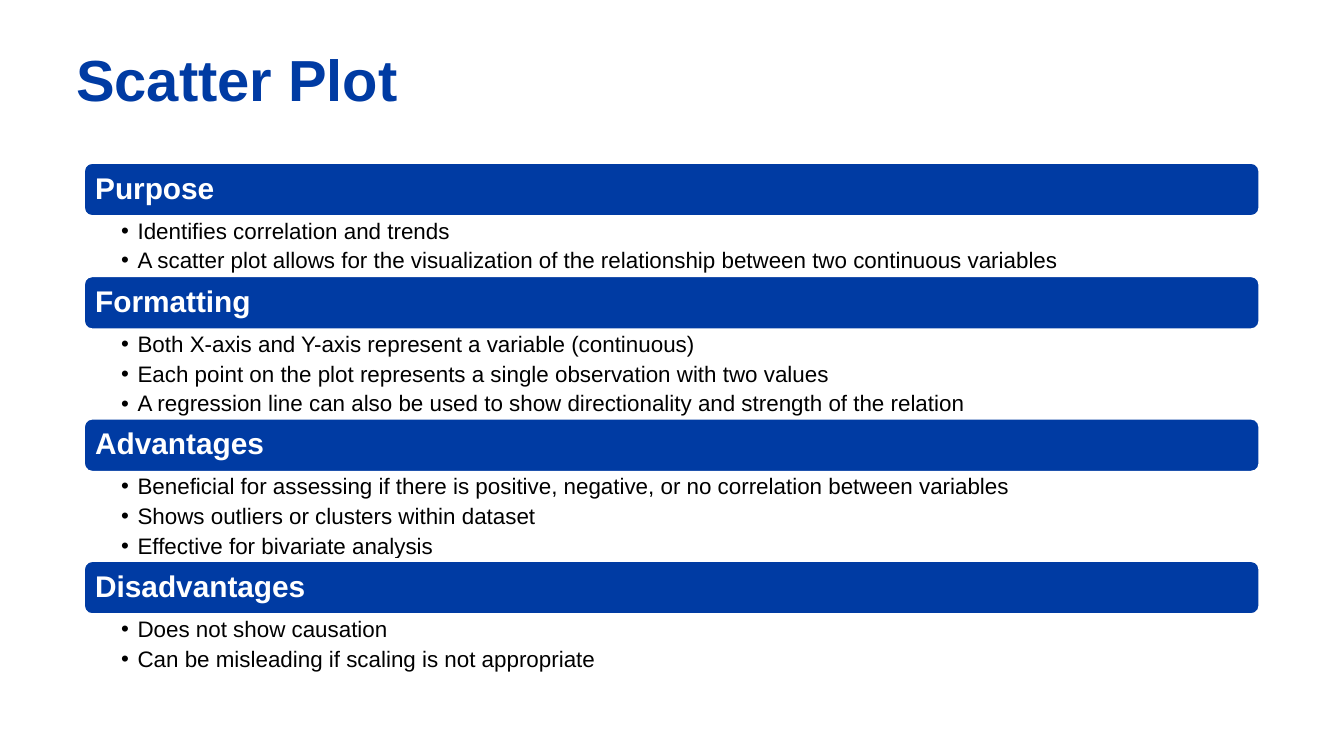
from dataclasses import dataclass

from lxml.etree import SubElement
from pptx import Presentation
from pptx.dml.color import RGBColor
from pptx.enum.shapes import MSO_SHAPE
from pptx.enum.text import MSO_ANCHOR, MSO_AUTO_SIZE, PP_ALIGN
from pptx.oxml.ns import qn
from pptx.util import Cm, Pt


@dataclass(frozen=True)
class Theme:
    font: str = "Arial"
    blue: RGBColor = RGBColor(0x00, 0x3B, 0xA3)
    white: RGBColor = RGBColor(0xFF, 0xFF, 0xFF)
    black: RGBColor = RGBColor(0x00, 0x00, 0x00)
    title_size: Pt = Pt(31)
    heading_size: Pt = Pt(16)
    body_size: Pt = Pt(12)


THEME = Theme()

# Layout of the stacked sections
LEFT, TOP, WIDTH = Cm(1.57), Cm(3.06), Cm(22.25)
BANNER_HEIGHT = Cm(1.04)
ROW_HEIGHT = Cm(0.55)
BULLET_INDENT = Cm(0.31)

SECTIONS = [
    ("Purpose", [
        "Identifies correlation and trends",
        "A scatter plot allows for the visualization of the relationship "
        "between two continuous variables",
    ]),
    ("Formatting", [
        "Both X-axis and Y-axis represent a variable (continuous)",
        "Each point on the plot represents a single observation with two values",
        "A regression line can also be used to show directionality and "
        "strength of the relation",
    ]),
    ("Advantages", [
        "Beneficial for assessing if there is positive, negative, or no "
        "correlation between variables",
        "Shows outliers or clusters within dataset",
        "Effective for bivariate analysis",
    ]),
    ("Disadvantages", [
        "Does not show causation",
        "Can be misleading if scaling is not appropriate",
    ]),
]


def place(sp, left, top, width, height):
    sp.left, sp.top, sp.width, sp.height = left, top, width, height


def set_frame(tf, anchor, left, top, right, bottom):
    tf.word_wrap = True
    tf.auto_size = MSO_AUTO_SIZE.NONE
    tf.vertical_anchor = anchor
    tf.margin_left, tf.margin_top = left, top
    tf.margin_right, tf.margin_bottom = right, bottom


def format_text(p, size, color, bold=False):
    p.alignment = PP_ALIGN.LEFT
    for r in p.runs:
        r.font.name = THEME.font
        r.font.size = size
        r.font.bold = bold
        r.font.color.rgb = color


def add_bullet(p):
    pPr = p._p.get_or_add_pPr()
    pPr.set("marL", str(BULLET_INDENT))
    pPr.set("indent", str(-BULLET_INDENT))
    color = SubElement(pPr, qn("a:buClr"))
    SubElement(color, qn("a:srgbClr"), val=str(THEME.black))
    SubElement(pPr, qn("a:buFont"), typeface=THEME.font)
    SubElement(pPr, qn("a:buChar"), char="•")


def fill_title(sp, text):
    place(sp, Cm(1.19), Cm(0.58), Cm(21.9), Cm(2.77))
    tf = sp.text_frame
    tf.text = text
    set_frame(tf, MSO_ANCHOR.TOP, *[Cm(0.25)] * 4)
    format_text(tf.paragraphs[0], THEME.title_size, THEME.blue, bold=True)


def add_banner(s, text, top):
    sp = s.shapes.add_shape(MSO_SHAPE.ROUNDED_RECTANGLE,
                            LEFT, top, WIDTH, BANNER_HEIGHT)
    sp.shadow.inherit = False
    sp.fill.solid()
    sp.fill.fore_color.rgb = THEME.blue
    sp.line.color.rgb = THEME.white
    sp.line.width = Pt(2)
    tf = sp.text_frame
    tf.text = text
    set_frame(tf, MSO_ANCHOR.MIDDLE, Cm(0.18), 0, Cm(0.18), 0)
    p = tf.paragraphs[0]
    p.line_spacing = 0.9
    format_text(p, THEME.heading_size, THEME.white, bold=True)


def fill_list(sp, items, top, height):
    place(sp, LEFT, top, WIDTH, height)
    tf = sp.text_frame
    tf.text = "\n".join(items)
    set_frame(tf, MSO_ANCHOR.TOP, Cm(0.72), Cm(0.05), Cm(0.3), Cm(0.05))
    for p in tf.paragraphs:
        add_bullet(p)
        p.level = 1
        p.line_spacing = 0.9
        p.space_before = Pt(0)
        p.space_after = Pt(3)
        format_text(p, THEME.body_size, THEME.black)


def main():
    prs = Presentation()
    prs.slide_width, prs.slide_height = Cm(25.4), Cm(14.28)

    # The Comparison layout has a title and four body placeholders
    s = prs.slides.add_slide(prs.slide_layouts[4])
    title, *bodies = s.placeholders
    fill_title(title, "Scatter Plot")

    # Each section is a banner with its list directly below
    top = TOP
    for body, (heading, items) in zip(bodies, SECTIONS):
        add_banner(s, heading, top)
        top += BANNER_HEIGHT
        height = ROW_HEIGHT * len(items)
        fill_list(body, items, top, height)
        top += height

    prs.save("out.pptx")


if __name__ == "__main__":
    main()
